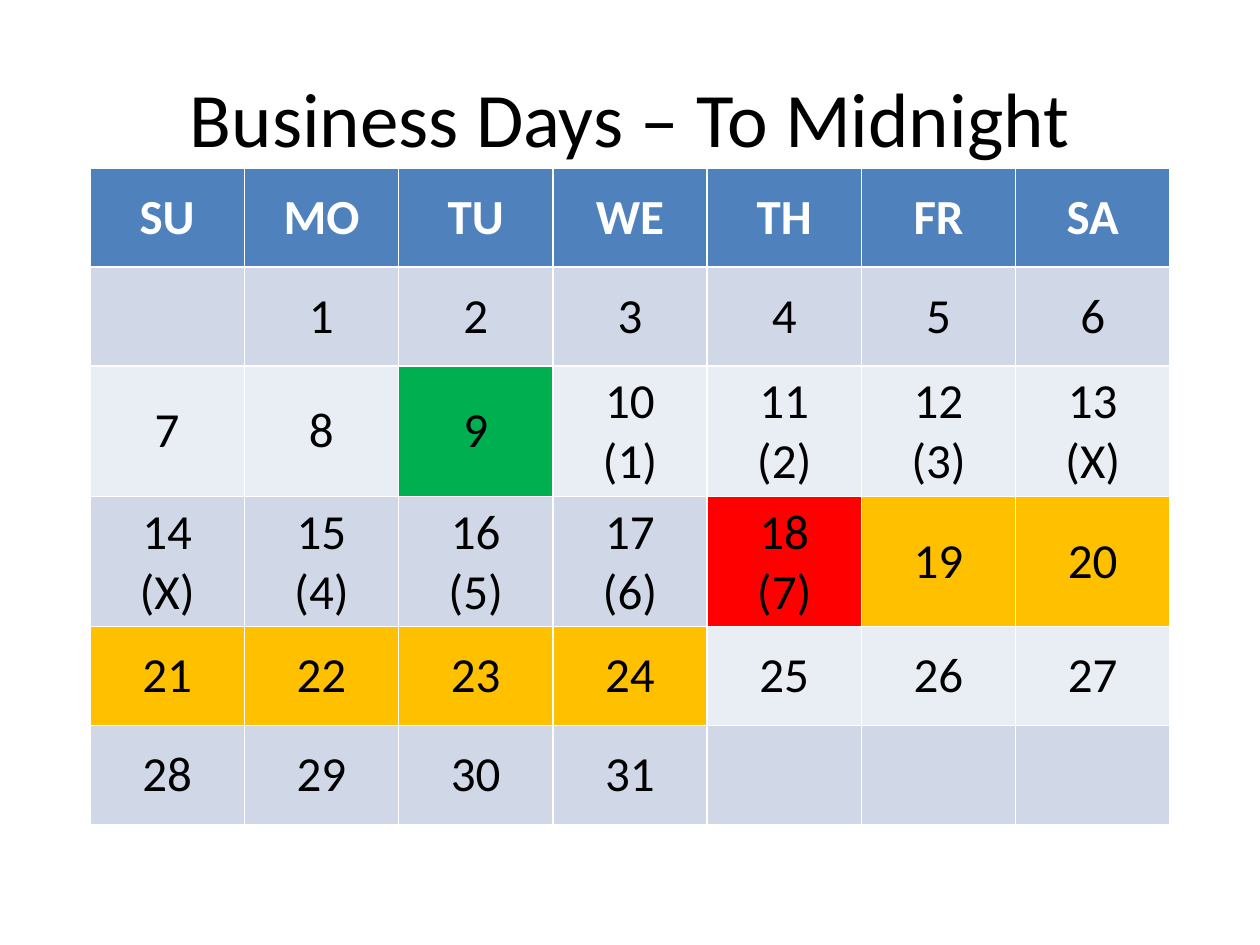
from pptx import Presentation
from pptx.dml.color import RGBColor
from pptx.enum.text import MSO_ANCHOR, PP_ALIGN
from pptx.util import Pt

MIDDLE = MSO_ANCHOR.MIDDLE
CENTER = PP_ALIGN.CENTER

DAYS = ["SU", "MO", "TU", "WE", "TH", "FR", "SA"]
WEEKS = 5
FIRST_COLUMN = 1  # the month starts on a Monday
LAST_DAY = 31
COUNTS = {10: "1", 11: "2", 12: "3", 13: "X", 14: "X",
          15: "4", 16: "5", 17: "6", 18: "7"}
HEADER = "4F81BD"
BANDS = ["D0D8E8", "E9EDF4"]
MARKED = {9: "00B050", 18: "FF0000"} | {day: "FFC000" for day in range(19, 25)}


def px(n):
    return round(n * 914400 / 126)


def style(p, size, color, bold=False):
    p.alignment = CENTER
    p.font.name = "Calibri"
    p.font.size = Pt(size)
    p.font.bold = bold
    p.font.color.rgb = RGBColor.from_string(color)


prs = Presentation()
prs.slide_width, prs.slide_height = px(1260), px(945)
s = prs.slides.add_slide(prs.slide_layouts[6])

# Title
title = s.shapes.add_textbox(px(63), px(38), px(1134), px(158))
tf = title.text_frame
tf.word_wrap = True
tf.vertical_anchor = MIDDLE
tf.text = "Business Days – To Midnight"
style(tf.paragraphs[0], 44, "000000")

# Calendar
calendar = s.shapes.add_table(WEEKS + 1, len(DAYS), px(90), px(168),
                              px(1080), px(594)).table
for row in range(WEEKS + 1):
    for col, name in enumerate(DAYS):
        day = (row - 1) * len(DAYS) + col - FIRST_COLUMN + 1
        if row == 0:
            text, fill, color = name, HEADER, "FFFFFF"
        else:
            text = str(day) if 1 <= day <= LAST_DAY else ""
            if day in COUNTS:
                text += f"\n({COUNTS[day]})"
            fill = MARKED.get(day, BANDS[(row - 1) % 2])
            color = "000000"
        cell = calendar.cell(row, col)
        cell.fill.solid()
        cell.fill.fore_color.rgb = RGBColor.from_string(fill)
        cell.vertical_anchor = MIDDLE
        cell.text = text
        for p in cell.text_frame.paragraphs:
            style(p, 28, color, bold=row == 0)

prs.save("out.pptx")
